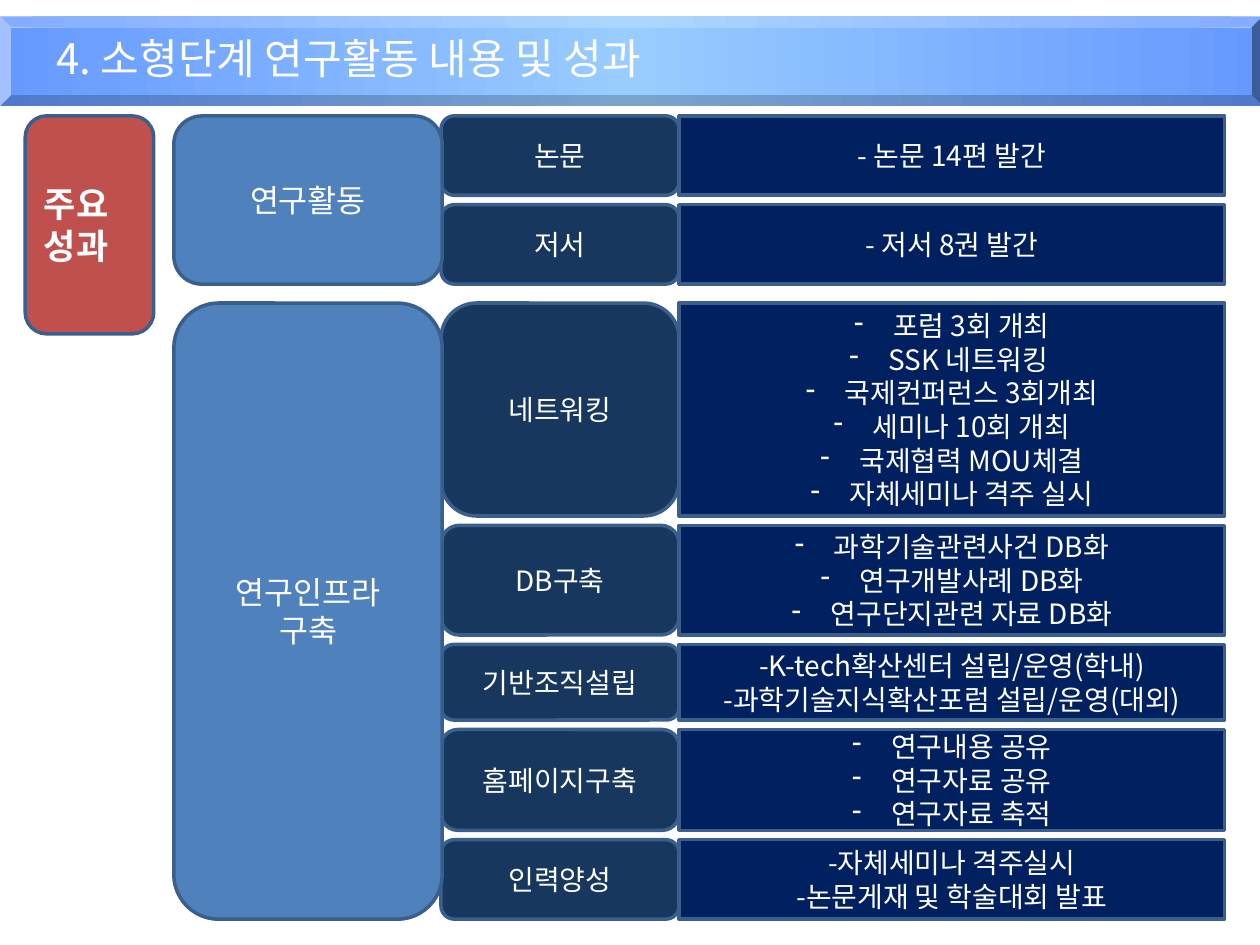
from dataclasses import dataclass

from lxml import etree
from pptx import Presentation
from pptx import util as u
from pptx.dml.color import RGBColor
from pptx.enum import shapes, text
from pptx.oxml import ns


@dataclass(frozen=True)
class Theme:
    font: str = "Noto Sans CJK KR"
    white: str = "FFFFFF"
    outline: str = "3A5F8C"
    badge: str = "C0504D"
    area: str = "4F81BD"
    topic: str = "17375E"
    result: str = "002060"
    banner_edge: str = "6699FF"
    banner_middle: str = "99CCFF"
    title_size: int = 24
    badge_size: int = 20
    area_size: int = 18
    body_size: int = 16


@dataclass(frozen=True)
class Topic:
    name: str
    height: float
    results: tuple[str, ...]
    bulleted: bool = False


@dataclass(frozen=True)
class Area:
    lines: tuple[str, ...]
    topics: tuple[Topic, ...]


@dataclass(frozen=True)
class Box:
    left: float
    top: float
    width: float
    height: float

    def lengths(self) -> list[u.Length]:
        return [u.Inches(n) for n in (self.left, self.top, self.width, self.height)]


THEME = Theme()
TOP = 0.92
TOPIC_GAP = 0.075
AREA_GAP = 0.15
AREA_LEFT, AREA_WIDTH = 1.38, 2.13
TOPIC_LEFT, TOPIC_WIDTH = 3.5, 1.89
RESULT_LEFT, RESULT_WIDTH = 5.39, 4.33
ROUNDED = shapes.MSO_SHAPE.ROUNDED_RECTANGLE
RECTANGLE = shapes.MSO_SHAPE.RECTANGLE

AREAS = (
    Area(("연구활동",), (
        Topic("논문", 0.63, ("- 논문 14편 발간",)),
        Topic("저서", 0.63, ("- 저서 8권 발간",)),
    )),
    Area(("연구인프라", "구축"), (
        Topic("네트워킹", 1.69, (
            "포럼 3회 개최", "SSK 네트워킹 ", "국제컨퍼런스 3회개최",
            "세미나 10회 개최", "국제협력 MOU체결", "자체세미나 격주 실시"), True),
        Topic("DB구축", 0.87, (
            "과학기술관련사건 DB화", "연구개발사례 DB화", "연구단지관련 자료 DB화"), True),
        Topic("기반조직설립", 0.6, (
            "-K-tech확산센터 설립/운영(학내)", "-과학기술지식확산포럼 설립/운영(대외)")),
        Topic("홈페이지구축", 0.8, (
            "연구내용 공유", "연구자료 공유", "연구자료 축적"), True),
        Topic("인력양성", 0.63, ("-자체세미나 격주실시", "-논문게재 및 학술대회 발표")),
    )),
)


def style_font(font, size: int, bold: bool = False) -> None:
    font.size = u.Pt(size)
    font.bold = bold
    font.color.rgb = RGBColor.from_string(THEME.white)
    font.name = THEME.font
    latin = font._element.find(ns.qn("a:latin"))
    east_asian = etree.Element(ns.qn("a:ea"), typeface=THEME.font)
    latin.addnext(east_asian)


def add_dash(paragraph) -> None:
    properties = paragraph._p.get_or_add_pPr()
    indent = u.Inches(0.31)
    properties.set("marL", str(indent))
    properties.set("indent", str(-indent))
    properties.insert(0, etree.Element(ns.qn("a:buChar"), char="-"))


def write_lines(frame, lines: tuple[str, ...], size: int, align=text.PP_ALIGN.CENTER,
                bold: bool = False, bulleted: bool = False) -> None:
    frame.word_wrap = True
    for index, line in enumerate(lines):
        paragraph = frame.paragraphs[0] if index == 0 else frame.add_paragraph()
        paragraph.text = line
        paragraph.alignment = align
        style_font(paragraph.font, size, bold)
        if bulleted:
            add_dash(paragraph)


def add_panel(slide, preset, box: Box, fill: str, lines: tuple[str, ...], size: int,
              **text_options) -> None:
    panel = slide.shapes.add_shape(preset, *box.lengths())
    panel.shadow.inherit = False
    panel.fill.solid()
    panel.fill.fore_color.rgb = RGBColor.from_string(fill)
    panel.line.color.rgb = RGBColor.from_string(THEME.outline)
    panel.line.width = u.Pt(2)
    panel.text_frame.vertical_anchor = text.MSO_ANCHOR.MIDDLE
    write_lines(panel.text_frame, lines, size, **text_options)


def add_banner(slide) -> None:
    banner = slide.shapes.add_shape(shapes.MSO_SHAPE.BEVEL, *Box(0, 0.13, 10.02, 0.71).lengths())
    banner.shadow.inherit = False
    banner.line.fill.background()
    banner.fill.gradient()
    banner.fill.gradient_angle = 0
    stops = banner.fill._fill._gradFill.find(ns.qn("a:gsLst"))
    for stop in list(stops):
        stops.remove(stop)
    for position, color in ((0, THEME.banner_edge), (50, THEME.banner_middle),
                            (100, THEME.banner_edge)):
        stop = etree.SubElement(stops, ns.qn("a:gs"), pos=str(position * 1000))
        etree.SubElement(stop, ns.qn("a:srgbClr"), val=color)


def add_title(slide, title: str) -> None:
    heading = slide.shapes.add_textbox(*Box(0.35, 0.21, 7.17, 0.5).lengths())
    frame = heading.text_frame
    write_lines(frame, (title,), THEME.title_size, text.PP_ALIGN.LEFT)
    effects = etree.SubElement(frame.paragraphs[0].runs[0].font._element, ns.qn("a:effectLst"))
    shadow = etree.SubElement(effects, ns.qn("a:outerShdw"), dist=str(u.Pt(2)), dir="2700000")
    etree.SubElement(shadow, ns.qn("a:srgbClr"), val="C0C0C0")


def add_area(slide, area: Area, top: float) -> float:
    topic_top = top
    for topic in area.topics:
        add_panel(slide, ROUNDED, Box(TOPIC_LEFT, topic_top, TOPIC_WIDTH, topic.height),
                  THEME.topic, (topic.name,), THEME.body_size)
        add_panel(slide, RECTANGLE, Box(RESULT_LEFT, topic_top, RESULT_WIDTH, topic.height),
                  THEME.result, topic.results, THEME.body_size, bulleted=topic.bulleted)
        topic_top += topic.height + TOPIC_GAP
    bottom = topic_top - TOPIC_GAP
    add_panel(slide, ROUNDED, Box(AREA_LEFT, top, AREA_WIDTH, bottom - top),
              THEME.area, area.lines, THEME.area_size)
    return bottom


def main() -> None:
    deck = Presentation()
    deck.slide_width, deck.slide_height = u.Inches(10), u.Inches(7.5)
    slide = deck.slides.add_slide(deck.slide_layouts[6])
    top = TOP
    for area in AREAS:
        top = add_area(slide, area, top) + AREA_GAP
    add_banner(slide)
    add_title(slide, "4. 소형단계 연구활동 내용 및 성과")
    add_panel(slide, ROUNDED, Box(0.2, TOP, 1.02, 1.73), THEME.badge, ("주요성과",),
              THEME.badge_size, align=text.PP_ALIGN.LEFT, bold=True)
    deck.save("out.pptx")


if __name__ == "__main__":
    main()
